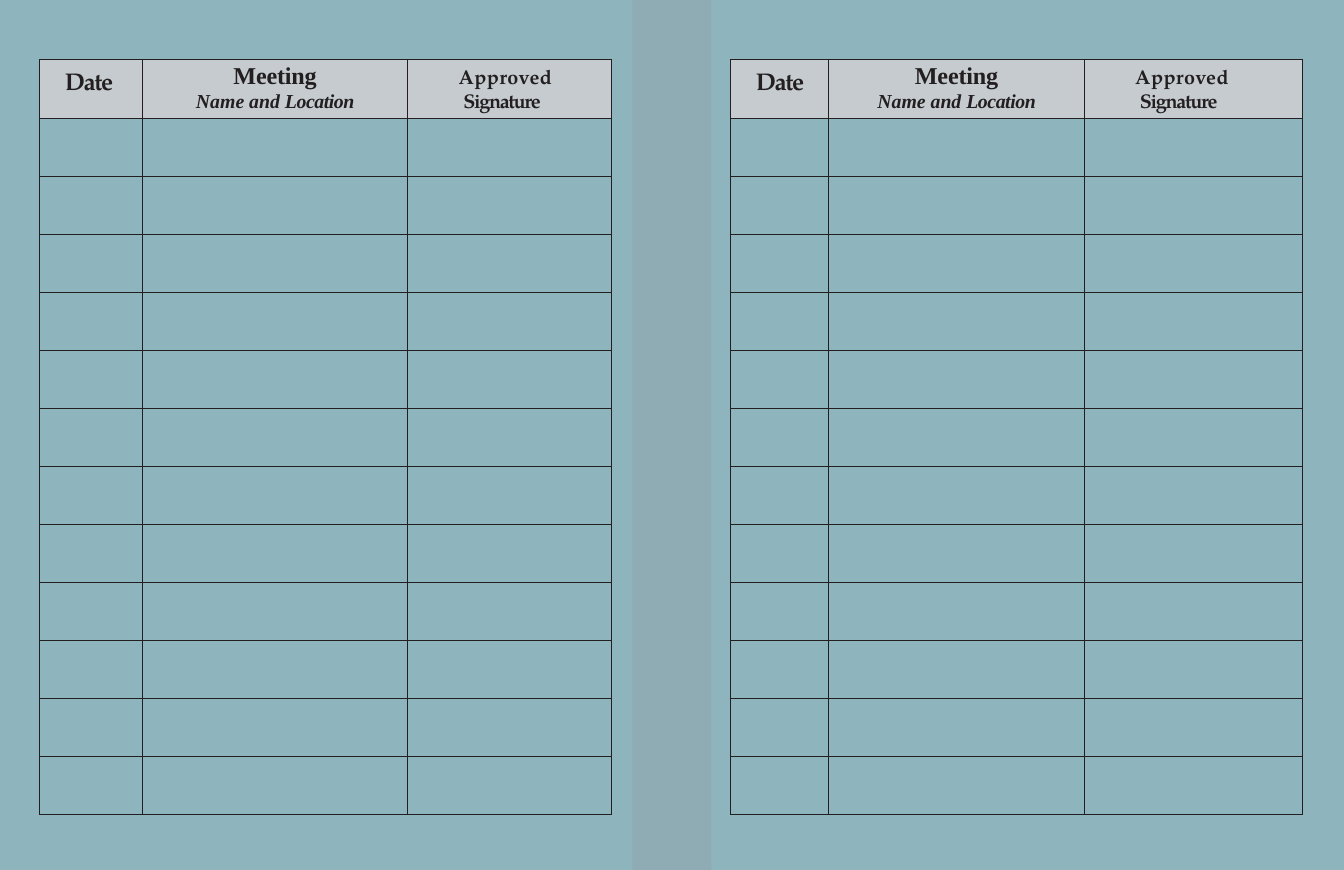
from lxml.etree import SubElement
from pptx import Presentation
from pptx.dml.color import RGBColor
from pptx.enum.shapes import MSO_SHAPE
from pptx.enum.text import PP_ALIGN
from pptx.oxml.ns import qn
from pptx.util import Inches, Pt

COLORS = {"page": "8EB5BE", "header": "C5CBCF", "ink": "231F20", "gutter": "949CA1"}
PAGELLA, TIMES = "TeX Gyre Pagella", "Times New Roman"
CENTER = PP_ALIGN.CENTER

TOP, HEADER_H, BODY_H, ENTRIES = 0.375, 0.375, 4.4, 12
LOGS = [(0.25, (0.65, 1.68, 1.29)), (4.62, (0.62, 1.62, 1.38))]

HEADERS = [
    (0.09, [
        ({"space_before": Pt(6.5)}, (0.16, 0),
         [("Date", -0.6, {"name": PAGELLA, "size": Pt(11)})]),
    ]),
    (0.01, [
        ({"alignment": CENTER, "line_spacing": Pt(13.1), "space_before": Pt(1.1)}, (0, 0),
         [("Meeting", -0.1, {"name": TIMES, "size": Pt(11)})]),
        ({"alignment": CENTER, "line_spacing": Pt(10.7)}, (0, 0),
         [("Name and ", 0, {"name": TIMES, "size": Pt(9), "italic": True}),
          ("Location", -0.2, {"name": TIMES, "size": Pt(9), "italic": True})]),
    ]),
    (0.04, [
        ({"line_spacing": Pt(11), "space_before": Pt(2.9)}, (0.35, -0.03),
         [("Approved ", 0.2, {"name": PAGELLA, "size": Pt(9)}),
          ("Signature", -0.6, {"name": PAGELLA, "size": Pt(9)})]),
    ]),
]


def rgb(name):
    return RGBColor.from_string(COLORS[name])


def set_attrs(target, values):
    for name, value in values.items():
        setattr(target, name, value)


def add_borders(cell):
    tcPr = cell._tc.get_or_add_tcPr()
    for side in ("a:lnL", "a:lnR", "a:lnT", "a:lnB"):
        ln = SubElement(tcPr, qn(side), w=str(Pt(0.5)))
        fill = SubElement(ln, qn("a:solidFill"))
        SubElement(fill, qn("a:srgbClr"), val=COLORS["ink"])


def write_header(cell, top, paragraphs):
    cell.margin_top = Inches(top)
    cell.fill.solid()
    cell.fill.fore_color.rgb = rgb("header")
    tf = cell.text_frame
    for i, (layout, (margin, indent), runs) in enumerate(paragraphs):
        p = tf.add_paragraph() if i else tf.paragraphs[0]
        set_attrs(p, layout)
        pPr = p._p.get_or_add_pPr()
        pPr.set("marL", str(Inches(margin)))
        pPr.set("indent", str(Inches(indent)))
        for text, spacing, font in runs:
            r = p.add_run()
            r.text = text
            set_attrs(r.font, {"bold": True, **font})
            r.font.color.rgb = rgb("ink")
            r._r.get_or_add_rPr().set("spc", str(round(spacing * 100)))


def add_log(s, left, widths):
    frame = s.shapes.add_table(ENTRIES + 1, len(widths), Inches(left), Inches(TOP),
                               Inches(sum(widths)), Inches(HEADER_H + BODY_H))
    table = frame.table
    set_attrs(table, {"first_row": False, "horz_banding": False})
    for column, width in zip(table.columns, widths):
        column.width = Inches(width)
    for i, row in enumerate(table.rows):
        row.height = Inches(BODY_H / ENTRIES if i else HEADER_H)
        for cell, header in zip(row.cells, HEADERS):
            set_attrs(cell, dict.fromkeys(
                ("margin_left", "margin_right", "margin_top", "margin_bottom"), 0))
            add_borders(cell)
            if i:
                cell.fill.background()
            else:
                write_header(cell, *header)


def add_gutter(s, left, height):
    sp = s.shapes.add_shape(MSO_SHAPE.RECTANGLE, Inches(left), 0, Inches(0.25), height)
    sp.shadow.inherit = False
    sp.line.fill.background()
    sp.fill.solid()
    sp.fill.fore_color.rgb = rgb("gutter")
    color = sp._element.spPr.find(qn("a:solidFill"))[0]
    SubElement(color, qn("a:alpha"), val="33000")


def main():
    """Build the two-page meeting attendance log."""
    prs = Presentation()
    set_attrs(prs, {"slide_width": Inches(8.5), "slide_height": Inches(5.5)})
    s = prs.slides.add_slide(prs.slide_layouts[6])
    s.background.fill.solid()
    s.background.fill.fore_color.rgb = rgb("page")
    for left, widths in LOGS:
        add_log(s, left, widths)
    for left in (4.25, 4):
        add_gutter(s, left, prs.slide_height)
    prs.save("out.pptx")


if __name__ == "__main__":
    main()
